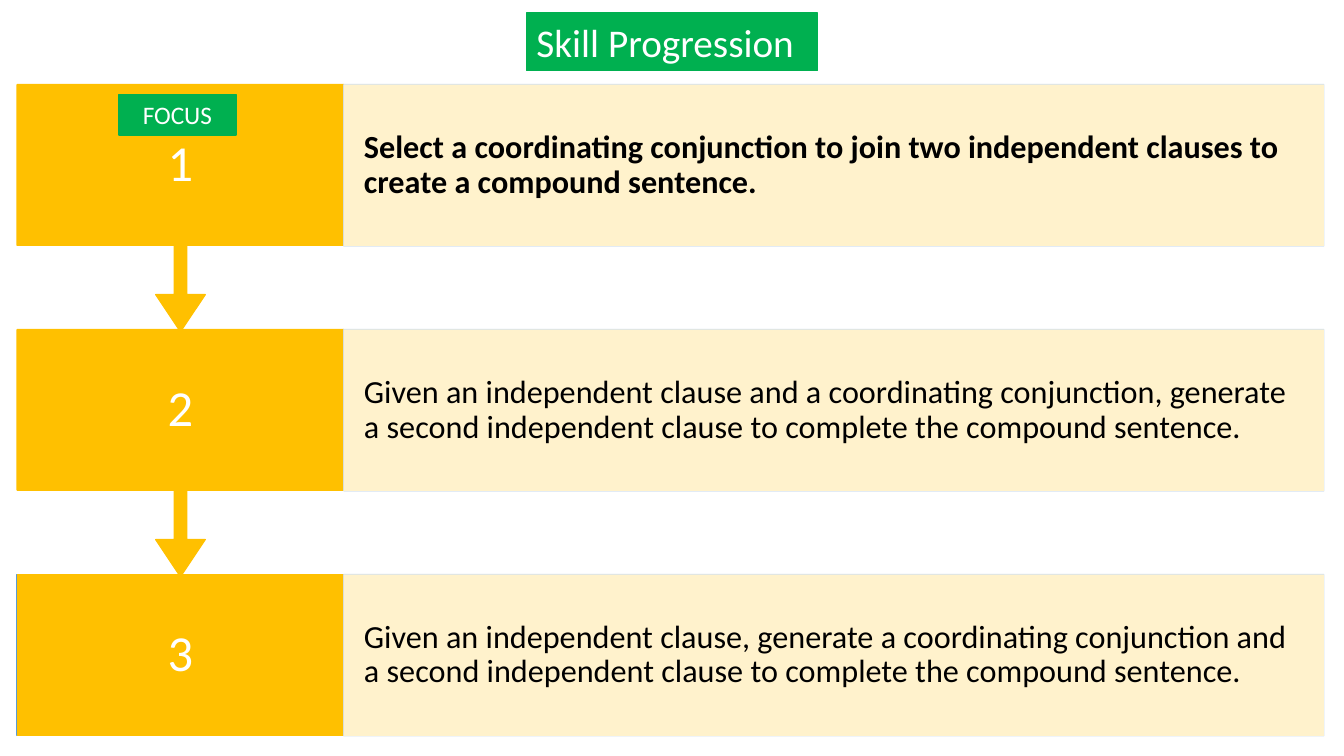
"""Build the Skill Progression slide: three numbered steps joined by arrows."""
from dataclasses import dataclass

from lxml.etree import SubElement
from pptx import Presentation
from pptx.dml.color import RGBColor
from pptx.enum.shapes import MSO_SHAPE as SHAPE
from pptx.enum.text import MSO_ANCHOR as ANCHOR, MSO_AUTO_SIZE as AUTO, PP_ALIGN as ALIGN
from pptx.oxml.ns import qn
from pptx.util import Inches, Pt


@dataclass(frozen=True)
class Theme:
    """Colours, font and type sizes."""
    font: str = "Calibri"
    green: str = "00B050"
    gold: str = "FFC000"
    cream: str = "FFF2CC"
    blue: str = "599BD5"
    pale_blue: str = "CFDEEF"
    white: str = "FFFFFF"
    black: str = "000000"
    title_size: int = 28
    number_size: int = 36
    body_size: int = 23
    tag_size: int = 18


THEME = Theme()
LEFT, TOP, PITCH = 0.17, 0.84, 2.43
NUMBER_W, BODY_W, STEP_H, CALLOUT_H = 3.24, 9.72, 1.6, 2.45
STEPS = [
    "Select a coordinating conjunction to join two independent clauses to "
    "create a compound sentence.",
    "Given an independent clause and a coordinating conjunction, generate "
    "a second independent clause to complete the compound sentence.",
    "Given an independent clause, generate a coordinating conjunction and "
    "a second independent clause to complete the compound sentence.",
]


def paint(shape, fill, line=None, width=1):
    """Set the fill and the outline of a shape."""
    shape.fill.solid()
    shape.fill.fore_color.rgb = RGBColor.from_string(fill)
    if line:
        shape.line.color.rgb = RGBColor.from_string(line)
        shape.line.width = Pt(width)
    else:
        shape.line.fill.background()


def add_block(shapes, box, fill, line=None, width=1, kind=SHAPE.RECTANGLE):
    """Add a flat preset shape."""
    shape = shapes.add_shape(kind, *map(Inches, box))
    shape.shadow.inherit = False
    paint(shape, fill, line, width)
    return shape


def write(shape, text, size, color, align=ALIGN.LEFT, anchor=ANCHOR.TOP,
          insets=(0.1, 0.05), spacing=None, bold=False):
    """Put formatted text into a shape."""
    tf = shape.text_frame
    tf.text = text
    tf.word_wrap = True
    tf.auto_size = AUTO.NONE
    tf.vertical_anchor = anchor
    tf.margin_left = tf.margin_right = Inches(insets[0])
    tf.margin_top = tf.margin_bottom = Inches(insets[1])
    p = tf.paragraphs[0]
    p.alignment = align
    p.line_spacing = spacing
    font = p.runs[0].font
    font.name, font.size, font.bold = THEME.font, Pt(size), bold
    font.color.rgb = RGBColor.from_string(color)


def set_opacity(shape, percent):
    """Make the fill and outline of a shape partly transparent."""
    for color in shape._element.spPr.iter(qn("a:srgbClr")):
        SubElement(color, qn("a:alpha")).set("val", str(percent * 1000))


def add_step(shapes, index, text):
    """Add one numbered step, with an arrow down unless it is the last."""
    top = TOP + index * PITCH
    number_box = (LEFT, top, NUMBER_W, STEP_H)
    body_box = (LEFT + NUMBER_W, top, BODY_W, STEP_H)
    if index < len(STEPS) - 1:
        arrow = add_block(shapes, (LEFT, top, NUMBER_W, CALLOUT_H), THEME.gold,
                          THEME.gold, kind=SHAPE.UP_ARROW_CALLOUT)
        arrow.rotation = 180
        for i, value in enumerate((0.05, 0.1, 0.15, 0.65)):
            arrow.adjustments[i] = value
    else:
        add_block(shapes, number_box, THEME.blue, THEME.blue)
    number = add_block(shapes, number_box, THEME.gold, THEME.gold, 0.75)
    write(number, str(index + 1), THEME.number_size, THEME.white, ALIGN.CENTER,
          ANCHOR.MIDDLE, (0.23, 0.28), 0.9)
    set_opacity(add_block(shapes, body_box, THEME.pale_blue, THEME.pale_blue), 90)
    body = add_block(shapes, body_box, THEME.cream)
    write(body, text, THEME.body_size, THEME.black, anchor=ANCHOR.MIDDLE,
          insets=(0.2, 0.32), spacing=0.9, bold=index == 0)


def add_title(s, text):
    """Move and format the title placeholder."""
    title = s.shapes.title
    title.left, title.top, title.width, title.height = map(Inches, (5.22, 0.13, 2.89, 0.57))
    paint(title, THEME.green, THEME.green)
    write(title, text, THEME.title_size, THEME.white)


def add_tag(s, text):
    """Add the green tag on the first step."""
    tag = add_block(s.shapes, (1.18, 0.94, 1.16, 0.4), THEME.green, THEME.green)
    write(tag, text, THEME.tag_size, THEME.white, ALIGN.CENTER)


def main():
    """Build and save the slide."""
    prs = Presentation()
    prs.slide_width, prs.slide_height = Inches(13.33), Inches(7.5)
    s = prs.slides.add_slide(prs.slide_layouts[5])
    add_title(s, "Skill Progression")
    steps = s.shapes.add_group_shape()
    for index, text in reversed(list(enumerate(STEPS))):
        add_step(steps.shapes, index, text)
    add_tag(s, "FOCUS")
    prs.save("out.pptx")


if __name__ == "__main__":
    main()
